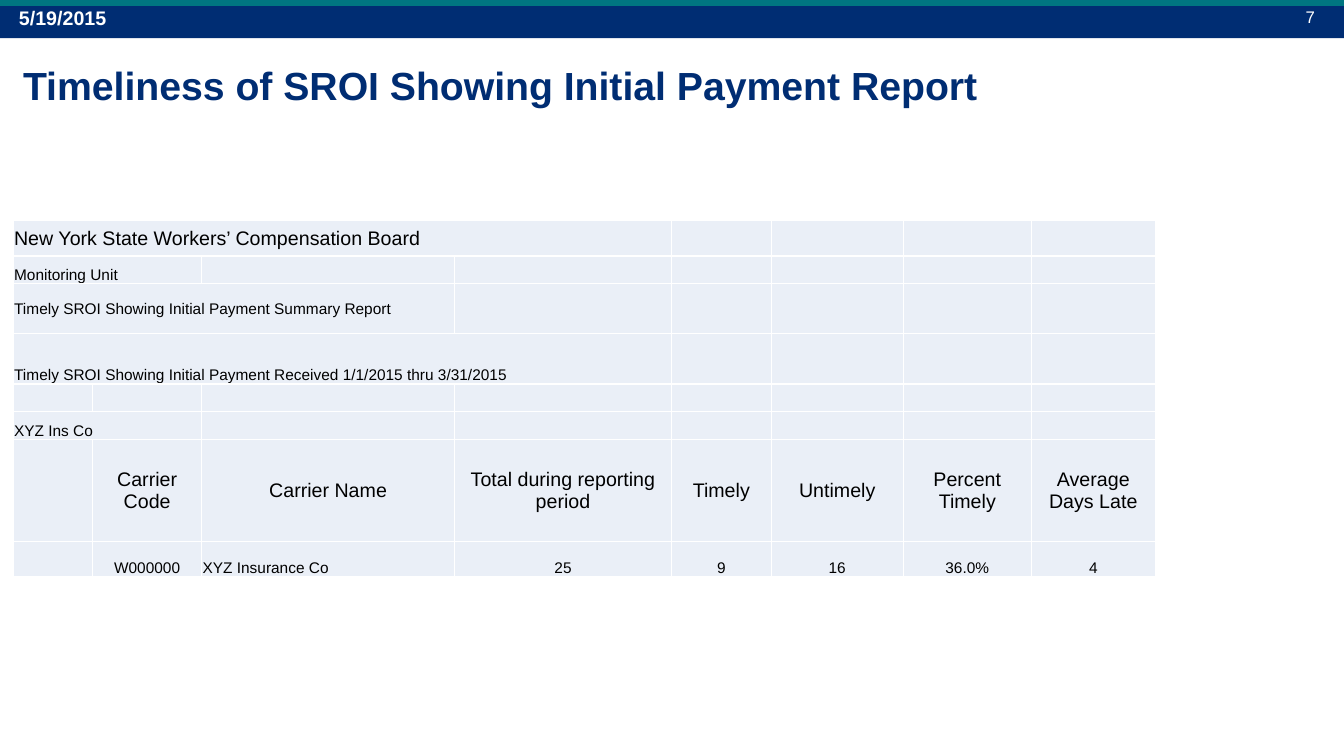
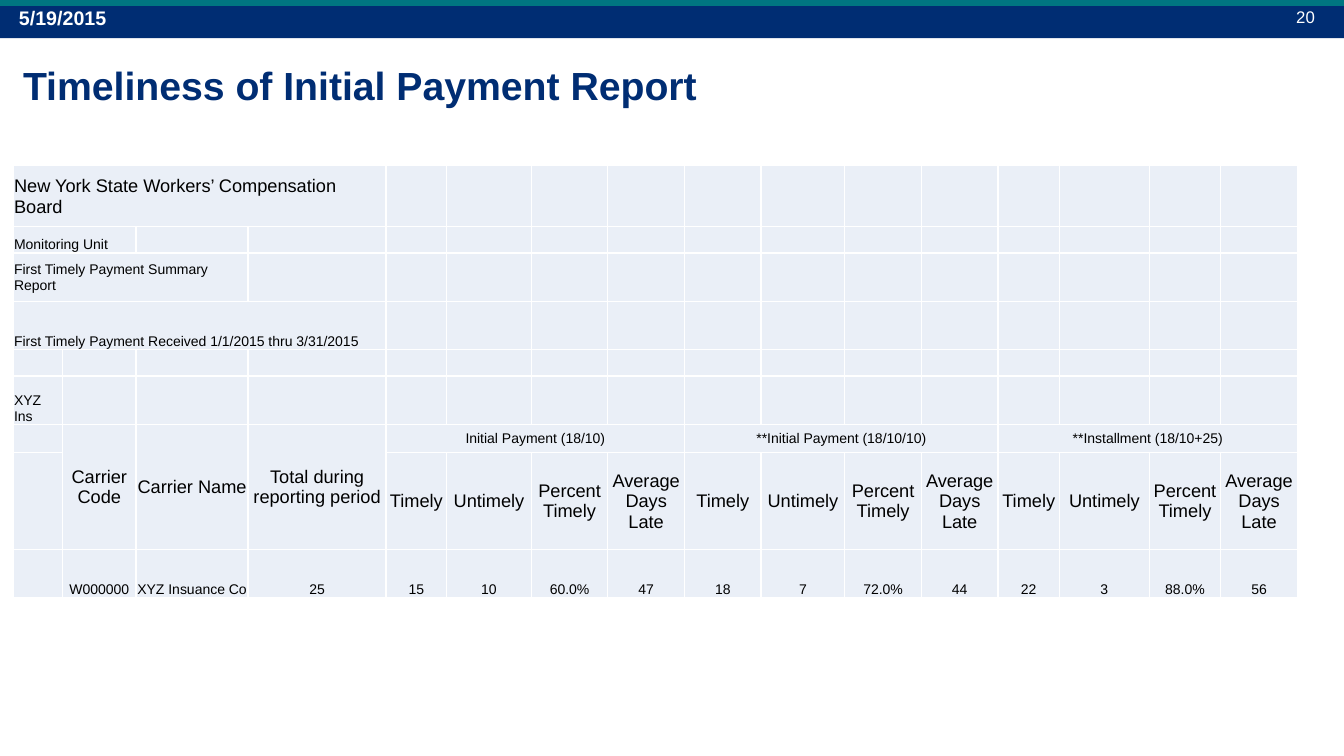
from pptx import Presentation
from pptx.dml.color import RGBColor
from pptx.enum.shapes import MSO_SHAPE
from pptx.enum.text import MSO_ANCHOR, PP_ALIGN
from pptx.util import Pt

PX = 9144  # EMU in one px, 100 px to the inch
SLIDE_WIDTH, SLIDE_HEIGHT = 1333, 750
FONT = "Arial"

NAVY = RGBColor(0x00, 0x2D, 0x73)
TEAL = RGBColor(0x00, 0x76, 0x81)
PALE_BLUE = RGBColor(0xEA, 0xEF, 0xF7)
WHITE = RGBColor(0xFF, 0xFF, 0xFF)
BLACK = RGBColor(0x00, 0x00, 0x00)

RECTANGLE = MSO_SHAPE.RECTANGLE
LEFT, CENTER, RIGHT = PP_ALIGN.LEFT, PP_ALIGN.CENTER, PP_ALIGN.RIGHT
MIDDLE, BOTTOM = MSO_ANCHOR.MIDDLE, MSO_ANCHOR.BOTTOM

BOARD = "New York State Workers’ Compensation Board"
MEASURES = ["Timely", "Untimely", "Percent Timely", "Average Days Late"]
CARRIER_HEADINGS = ["Carrier Code", "Carrier Name", "Total during reporting period"]


class Deck:
    """Holds the shared style and the current slide."""

    def __init__(self):
        self.presentation = Presentation()
        self.presentation.slide_width = SLIDE_WIDTH * PX
        self.presentation.slide_height = SLIDE_HEIGHT * PX
        self.slide = None

    def new_slide(self, title, title_width, number):
        blank_layout = self.presentation.slide_layouts[6]
        self.slide = self.presentation.slides.add_slide(blank_layout)
        self.band(5, 33, NAVY)
        self.band(0, 6, TEAL)
        heading = self.text(title, 13, 67, title_width, 28, NAVY, bold=True)
        heading.line_spacing = 0.9
        self.text("5/19/2015", 9, -2, 300, 14, WHITE, bold=True)
        self.text(number, 1014, -3, 300, 12, WHITE, align=RIGHT)

    def band(self, top, height, color):
        shape = self.slide.shapes.add_shape(
            RECTANGLE, 0, top * PX, SLIDE_WIDTH * PX, height * PX)
        shape.shadow.inherit = False
        shape.fill.solid()
        shape.fill.fore_color.rgb = color
        shape.line.fill.background()

    def style(self, paragraph, size, color, bold=False, align=LEFT):
        paragraph.alignment = align
        paragraph.font.name = FONT
        paragraph.font.size = Pt(size)
        paragraph.font.bold = bold
        paragraph.font.color.rgb = color

    def text(self, text, left, top, width, size, color, bold=False, align=LEFT):
        box = self.slide.shapes.add_textbox(left * PX, top * PX, width * PX, 40 * PX)
        frame = box.text_frame
        frame.word_wrap = True
        frame.vertical_anchor = MIDDLE
        paragraph = frame.paragraphs[0]
        paragraph.text = text
        self.style(paragraph, size, color, bold, align)
        return paragraph

    def table(self, top, widths, heights):
        """Adds a pale grid; the default table style draws its white lines."""
        table = self.slide.shapes.add_table(
            len(heights), len(widths), 13 * PX, top * PX,
            sum(widths) * PX, sum(heights) * PX).table
        table.first_row = table.horz_banding = False
        for column, width in zip(table.columns, widths):
            column.width = width * PX
        for row, height in zip(table.rows, heights):
            row.height = height * PX
        for cell in table.iter_cells():
            cell.fill.solid()
            cell.fill.fore_color.rgb = PALE_BLUE
            cell.margin_left = cell.margin_right = cell.margin_top = PX
            cell.margin_bottom = 0
            # Empty cells need a small size too, or they stretch their row
            end = cell.text_frame.paragraphs[0]._p.get_or_add_endParaRPr()
            end.set("sz", "1000")
        return table

    def cell(self, table, row, column, text, size, align=CENTER, anchor=MIDDLE,
             rows=1, columns=1):
        cell = table.cell(row, column)
        if rows > 1 or columns > 1:
            cell.merge(table.cell(row + rows - 1, column + columns - 1))
        cell.vertical_anchor = anchor
        paragraph = cell.text_frame.paragraphs[0]
        paragraph.text = text
        self.style(paragraph, size, BLACK, align=align)

    def captions(self, table, captions, board_size, size):
        """Fills the left-aligned lines above the column headings."""
        self.cell(table, 0, 0, BOARD, board_size, LEFT, columns=4)
        for row, text, columns, anchor in captions:
            self.cell(table, row, 0, text, size, LEFT, anchor, columns=columns)

    def cells(self, table, row, column, texts, size, anchor=MIDDLE, rows=1):
        for offset, text in enumerate(texts):
            self.cell(table, row, column + offset, text, size, anchor=anchor, rows=rows)


def sroi_slide(deck):
    deck.new_slide("Timeliness of SROI Showing Initial Payment Report", 1021, "7")
    table = deck.table(219, [79, 108, 251, 215, 99, 131, 127, 123],
                       [35, 27, 50, 50, 27, 28, 101, 35])
    deck.captions(table, [
        (1, "Monitoring Unit", 2, BOTTOM),
        (2, "Timely SROI Showing Initial Payment Summary Report", 3, MIDDLE),
        (3, "Timely SROI Showing Initial Payment Received 1/1/2015 thru 3/31/2015",
         4, BOTTOM),
        (5, "XYZ Ins Co", 2, BOTTOM),
    ], 14, 11)
    deck.cells(table, 6, 1, CARRIER_HEADINGS + MEASURES, 14)
    deck.cell(table, 7, 1, "W000000", 11, anchor=BOTTOM)
    deck.cell(table, 7, 2, "XYZ Insurance Co", 11, LEFT, BOTTOM)
    deck.cells(table, 7, 3, ["25", "9", "16", "36.0%", "4"], 11, BOTTOM)


def initial_payment_slide(deck):
    deck.new_slide("Timeliness of Initial Payment Report", 758, "20")
    table = deck.table(
        164,
        [49, 73, 111, 137, 60, 84, 76, 76, 76, 83, 76, 76, 61, 89, 71, 76],
        [61, 26, 48, 48, 26, 48, 28, 96, 48])
    deck.captions(table, [
        (1, "Monitoring Unit", 2, BOTTOM),
        (2, "First Timely Payment Summary Report", 3, MIDDLE),
        (3, "First Timely Payment Received 1/1/2015 thru 3/31/2015", 4, BOTTOM),
        (5, "XYZ Ins", 1, BOTTOM),
    ], 13, 10)
    deck.cells(table, 6, 1, CARRIER_HEADINGS, 13, rows=2)
    deck.cells(table, 8, 1, ["W000000", "XYZ Insuance Co", "25"], 10, BOTTOM)
    # One group of four measures for each kind of payment
    groups = [
        ("Initial Payment (18/10)", ["15", "10", "60.0%", "47"]),
        ("**Initial Payment (18/10/10)", ["18", "7", "72.0%", "44"]),
        ("**Installment (18/10+25)", ["22", "3", "88.0%", "56"]),
    ]
    for index, (heading, values) in enumerate(groups):
        column = 4 + index * len(MEASURES)
        deck.cell(table, 6, column, heading, 10, columns=len(MEASURES))
        deck.cells(table, 7, column, MEASURES, 13)
        deck.cells(table, 8, column, values, 10, BOTTOM)


def main():
    deck = Deck()
    sroi_slide(deck)
    initial_payment_slide(deck)
    deck.presentation.save("out.pptx")


if __name__ == "__main__":
    main()
